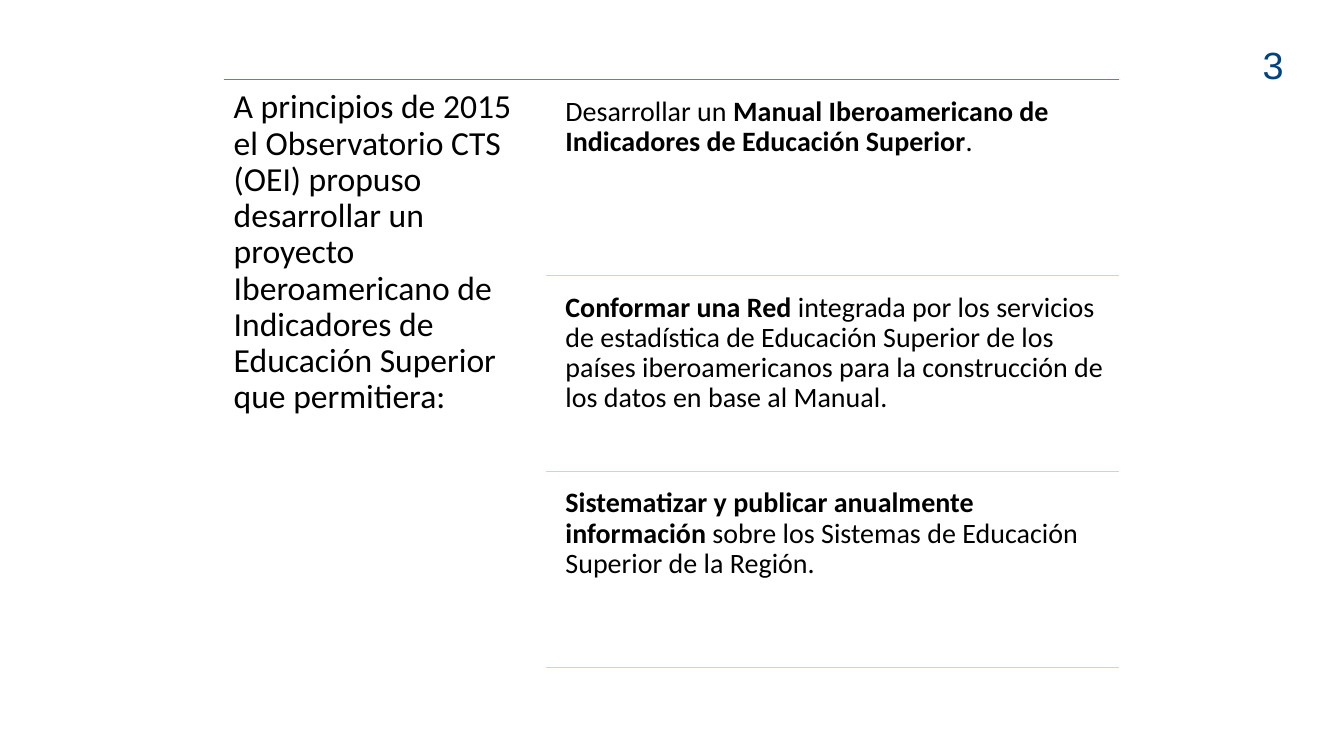
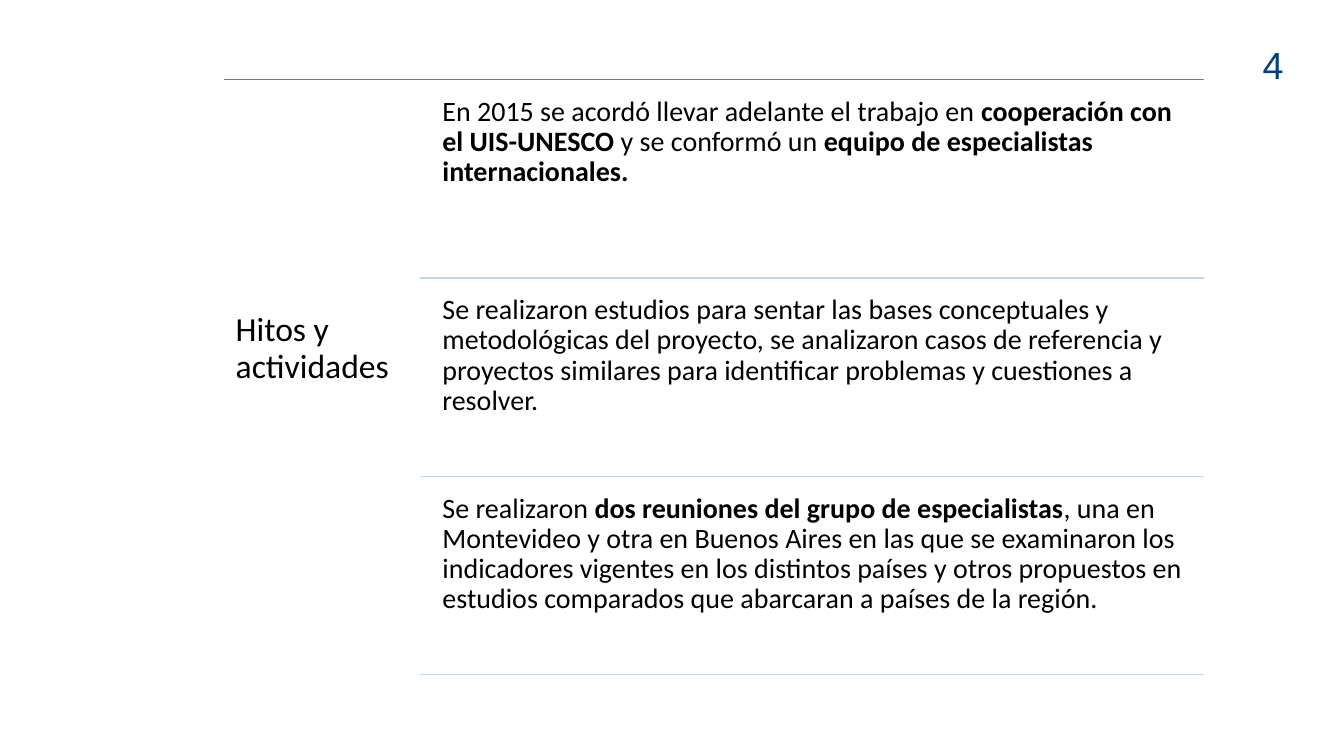
import pptx
import pptx.util
import pptx.dml.color
import pptx.enum.shapes
import pptx.enum.text
import pptx.oxml

Cm = pptx.util.Cm
Pt = pptx.util.Pt
RGB = pptx.dml.color.RGBColor
TEXT = RGB(0x00, 0x00, 0x00)
NUMBER = RGB(0x01, 0x43, 0x80)
ACCENT = RGB(0x00, 0xAE, 0xC3)
RULE = RGB(0xBA, 0xDB, 0xE3)

LEFT, TOP = 5.64, 2.01
STEP = 1.05  # row pitch as a multiple of row height

# Text between asterisks is bold; lengths are in centimetres.
SLIDES = [
    {
        "number": "3",
        "title": "A principios de 2015 el Observatorio CTS (OEI) propuso "
                 "desarrollar un proyecto Iberoamericano de Indicadores de "
                 "Educación Superior que permitiera:",
        "width": 8.13, "inset": 0.25, "drop": 0.25,
        "rule": 13.77, "text": 14.05, "right": 28.2, "row": 4.7,
        "items": [
            "Desarrollar un *Manual Iberoamericano de Indicadores de "
            "Educación Superior*.",
            "*Conformar una Red *integrada por los servicios de estadística "
            "de Educación Superior de los países iberoamericanos para la "
            "construcción de los datos en base al Manual.",
            "*Sistematizar y publicar anualmente información *sobre los "
            "Sistemas de Educación Superior de la Región.",
        ],
    },
    {
        "number": "4",
        "title": "Hitos y actividades",
        "width": 4.95, "inset": 0.3, "drop": 5.87,
        "rule": 10.59, "text": 10.95, "right": 30.35, "row": 4.76,
        "items": [
            "En 2015 se acordó llevar adelante el trabajo en *cooperación "
            "con el UIS-UNESCO *y se conformó un *equipo de especialistas "
            "internacionales.*",
            "Se realizaron estudios para sentar las bases conceptuales y "
            "metodológicas del proyecto, se analizaron casos de referencia y "
            "proyectos similares para identificar problemas y cuestiones a "
            "resolver.",
            "Se realizaron *dos reuniones del grupo de especialistas*, una "
            "en Montevideo y otra en Buenos Aires en las que se examinaron "
            "los indicadores vigentes en los distintos países y otros "
            "propuestos en estudios comparados que abarcaran a países de la "
            "región.",
        ],
    },
]


def place(shape, left, top, width, height):
    shape.left, shape.top = Cm(left), Cm(top)
    shape.width, shape.height = Cm(width), Cm(height)


def write(shape, text, size, inset, drop, font="Calibri", color=TEXT, space=0.9):
    """Fill a shape with marked text; drop is the inset above the first line."""
    frame = shape.text_frame
    frame.word_wrap = True
    frame.auto_size = pptx.enum.text.MSO_AUTO_SIZE.NONE
    frame.vertical_anchor = pptx.enum.text.MSO_ANCHOR.TOP
    frame.margin_left = frame.margin_right = frame.margin_bottom = Cm(inset)
    frame.margin_top = Cm(drop)
    para = frame.paragraphs[0]
    para.alignment = pptx.enum.text.PP_ALIGN.LEFT
    para.line_spacing = space
    for i, part in enumerate(text.split("*")):
        if part:
            run = para.add_run()
            run.text = part
            run.font.name, run.font.size = font, Pt(size)
            run.font.color.rgb = color
            run.font.bold = i % 2 == 1


def add_text(slide, box, *args, **style):
    shape = slide.shapes.add_textbox(*map(Cm, box))
    write(shape, *args, **style)


def add_rule(slide, left, right, y, color):
    line = slide.shapes.add_connector(
        pptx.enum.shapes.MSO_CONNECTOR.STRAIGHT, Cm(left), Cm(y), Cm(right), Cm(y))
    line.line.color.rgb = color
    line.line.width = Pt(1)
    props = line.element.spPr
    props.append(pptx.oxml.parse_xml(
        '<a:effectLst xmlns:a="http://schemas.openxmlformats.org/drawingml/2006/main"/>'))


def add_slide(prs, data):
    slide = prs.slides.add_slide(prs.slide_layouts[5])
    right, row = data["right"], data["row"]
    pitch = row * STEP
    add_text(slide, (31.57, 0.91, 2.21, 1.42), data["number"], 27, 0.25, 0.13,
             font="Arial", color=NUMBER, space=1.0)
    add_rule(slide, LEFT, right, TOP, ACCENT)
    title = slide.shapes.title
    place(title, LEFT, TOP, data["width"], pitch * len(data["items"]) + 0.25)
    write(title, data["title"], 24, data["inset"], data["drop"])
    for i, item in enumerate(data["items"]):
        y = TOP + i * pitch
        box = (data["text"], y + pitch - row, right - data["text"], row)
        add_text(slide, box, item, 20, 0.2, 0.2)
        add_rule(slide, data["rule"], right, y + pitch, RULE)


def main():
    prs = pptx.Presentation()
    prs.slide_width, prs.slide_height = Cm(33.87), Cm(19.05)
    for data in SLIDES:
        add_slide(prs, data)
    prs.save("out.pptx")


if __name__ == "__main__":
    main()
